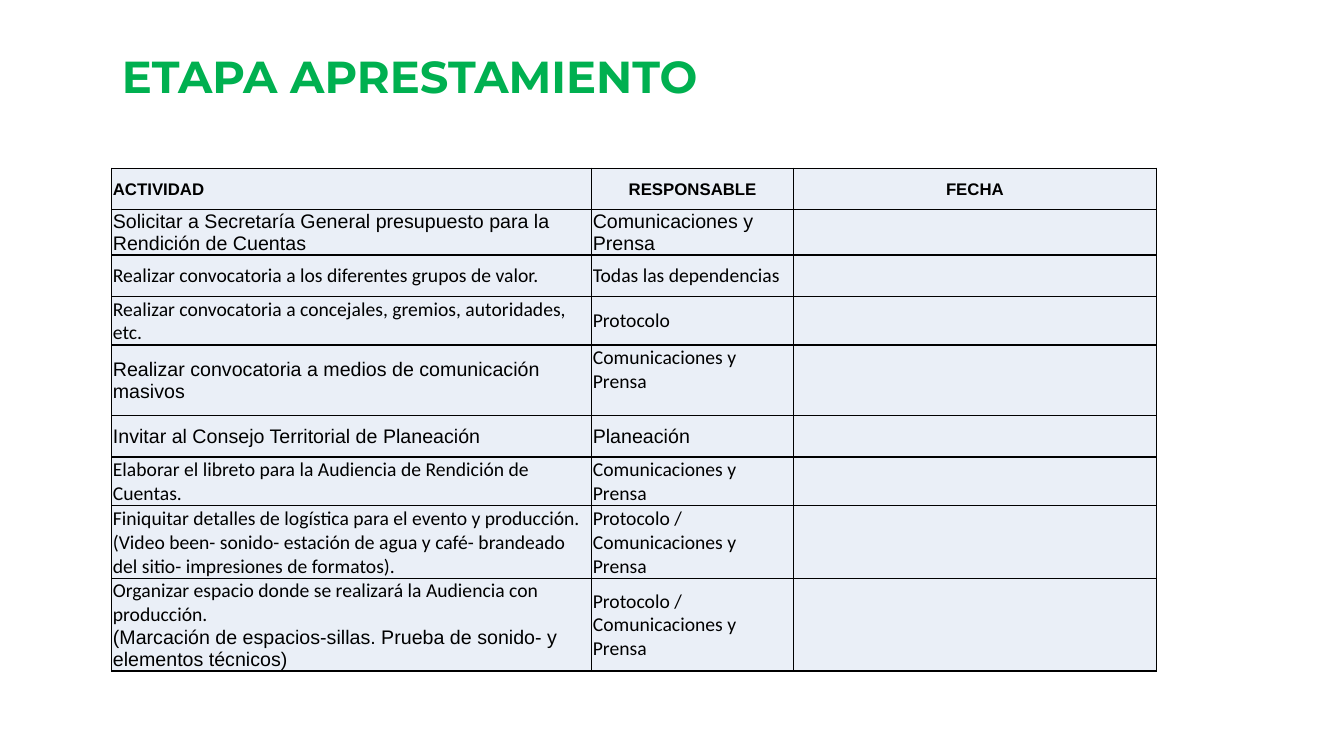
from lxml.etree import SubElement
from pptx import Presentation
from pptx.dml.color import RGBColor
from pptx.enum.text import MSO_ANCHOR, MSO_AUTO_SIZE, PP_ALIGN
from pptx.oxml.ns import qn
from pptx.util import Inches, Pt

# Content: each cell is a list of (text, font) paragraphs
TITLE = "ETAPA APRESTAMIENTO"
HEADERS = ["ACTIVIDAD", "RESPONSABLE", "FECHA"]
PRESS = "Comunicaciones y Prensa"
SHARED = "Protocolo / Comunicaciones y Prensa"
ACTIVITIES = [
    ([("Solicitar a Secretaría General presupuesto para la Rendición de Cuentas", "Arial")],
     [(PRESS, "Arial")]),
    ([("Realizar convocatoria a los diferentes grupos de valor.", "Calibri")],
     [("Todas las dependencias", "Calibri")]),
    ([("Realizar convocatoria a concejales, gremios, autoridades, etc.", "Calibri")],
     [("Protocolo", "Calibri")]),
    ([("Realizar convocatoria a medios de comunicación masivos", "Arial")],
     [(PRESS, "Calibri")]),
    ([("Invitar al Consejo Territorial de Planeación", "Arial")],
     [("Planeación", "Arial")]),
    ([("Elaborar el libreto para la Audiencia de Rendición de Cuentas.", "Calibri")],
     [(PRESS, "Calibri")]),
    ([("Finiquitar detalles de logística para el evento y producción.", "Calibri"),
      ("(Video been- sonido- estación de agua y café- brandeado del sitio- "
       "impresiones de formatos).", "Calibri")],
     [(SHARED, "Calibri")]),
    ([("Organizar espacio donde se realizará la Audiencia con producción.", "Calibri"),
      ("(Marcación de espacios-sillas. Prueba de sonido- y elementos técnicos)", "Arial")],
     [(SHARED, "Calibri")]),
]

# Layout and formats
LEFT, TABLE_TOP = 1.11, 1.67
COLUMN_WIDTHS = [4.76, 2, 3.6]
ROW_HEIGHTS = [0.41, 0.45, 0.41, 0.48, 0.7, 0.41, 0.48, 0.71, 0.91]
TOP_ANCHORED = (4, 1)
CELL_FORMAT = {"margin_left": Inches(0.01), "margin_top": Inches(0.01),
               "margin_right": Inches(0.01), "margin_bottom": 0,
               "vertical_anchor": MSO_ANCHOR.MIDDLE}
TITLE_FONT = {"name": "Montserrat", "size": Pt(32), "bold": True}
HEADER_FONT = {"name": "Arial", "size": Pt(12), "bold": True}
BODY_FONT = {"size": Pt(14), "bold": False}
GREEN, BLACK, PALE_BLUE = "00B050", "000000", "EAEFF7"


def color(value):
    return RGBColor.from_string(value)


def apply(target, values):
    for name, value in values.items():
        setattr(target, name, value)


def write(para, text, font, ink):
    span = para.add_run()
    span.text = text
    apply(span.font, font)
    span.font.color.rgb = color(ink)


def style_cell(cell):
    apply(cell, CELL_FORMAT)
    properties = cell._tc.get_or_add_tcPr()
    for side in ("a:lnL", "a:lnR", "a:lnT", "a:lnB"):
        line = SubElement(properties, qn(side), w=str(Pt(1)))
        SubElement(SubElement(line, qn("a:solidFill")), qn("a:srgbClr"), val=BLACK)
    cell.fill.solid()
    cell.fill.fore_color.rgb = color(PALE_BLUE)


deck = Presentation()
deck.slide_width, deck.slide_height = Inches(13.33), Inches(7.5)
page = deck.slides.add_slide(deck.slide_layouts[6])

# Table
table = page.shapes.add_table(
    len(ROW_HEIGHTS), len(COLUMN_WIDTHS), Inches(LEFT), Inches(TABLE_TOP),
    Inches(sum(COLUMN_WIDTHS)), Inches(sum(ROW_HEIGHTS))).table
apply(table, {"first_row": False, "horz_banding": False})
for column, width in zip(table.columns, COLUMN_WIDTHS):
    column.width = Inches(width)
for row, height in zip(table.rows, ROW_HEIGHTS):
    row.height = Inches(height)
for cell in table.iter_cells():
    style_cell(cell)
table.cell(*TOP_ANCHORED).vertical_anchor = MSO_ANCHOR.TOP

# Header row
for index, header in enumerate(HEADERS):
    para = table.cell(0, index).text_frame.paragraphs[0]
    para.alignment = PP_ALIGN.CENTER if index else PP_ALIGN.LEFT
    write(para, header, HEADER_FONT, BLACK)

# Activities
for row_index, activity in enumerate(ACTIVITIES, 1):
    for column_index, lines in enumerate(activity):
        frame = table.cell(row_index, column_index).text_frame
        for line_index, (text, name) in enumerate(lines):
            para = frame.add_paragraph() if line_index else frame.paragraphs[0]
            write(para, text, {**BODY_FONT, "name": name}, BLACK)

# Title
box = page.shapes.add_textbox(Inches(LEFT), Inches(0.43), Inches(7.99), Inches(0.64))
apply(box.text_frame, {"word_wrap": True, "auto_size": MSO_AUTO_SIZE.SHAPE_TO_FIT_TEXT})
write(box.text_frame.paragraphs[0], TITLE, TITLE_FONT, GREEN)

deck.save("out.pptx")
